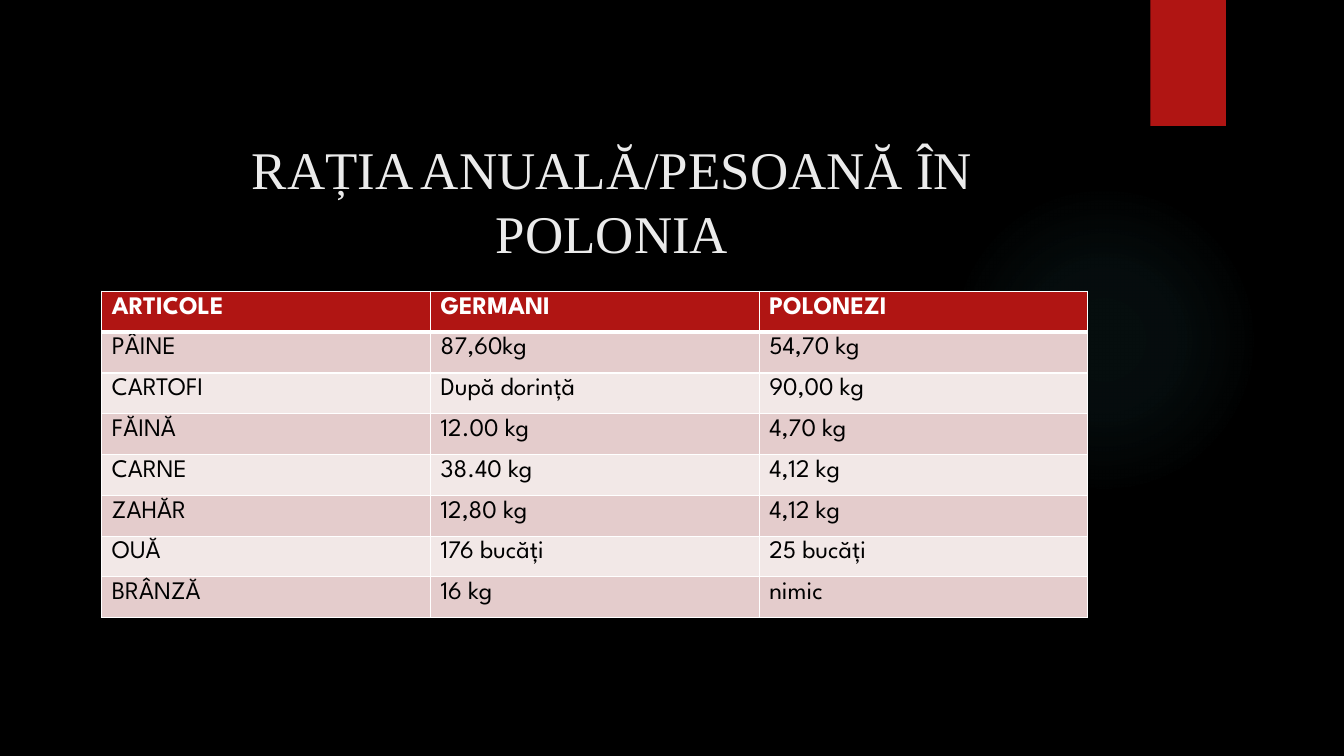
from dataclasses import dataclass

from lxml import etree
from pptx import Presentation, util as u
from pptx.dml.color import RGBColor
from pptx.enum import shapes, text
from pptx.oxml import ns


@dataclass(frozen=True)
class Theme:
    background: str = "000000"
    accent: str = "B01513"
    glow: str = "50B9C1"
    title_color: str = "EBEBEB"
    header_color: str = "FFFFFF"
    body_color: str = "000000"
    border: str = "FFFFFF"
    bands: tuple = ("E4CCCC", "F2E8E7")
    title_font: str = "Times New Roman"
    table_font: str = "League Spartan"
    title_size: float = 37.8
    table_size: float = 18
    thin: float = 1
    thick: float = 3


THEME = Theme()
TITLE = "RAȚIA ANUALĂ/PESOANĂ ÎN POLONIA"
RATIONS = [
    ("ARTICOLE", "GERMANI", "POLONEZI"),
    ("PÂINE", "87,60kg", "54,70 kg"),
    ("CARTOFI", "După dorință", "90,00 kg"),
    ("FĂINĂ", "12.00 kg", "4,70 kg"),
    ("CARNE", "38.40 kg", "4,12 kg"),
    ("ZAHĂR", "12,80 kg", "4,12 kg"),
    ("OUĂ", "176 bucăți", "25 bucăți"),
    ("BRÂNZĂ", "16 kg", "nimic"),
]


def paint(fill, color):
    fill.solid()
    fill.fore_color.rgb = RGBColor.from_string(color)


def add_run(paragraph, words, font, size, color, bold=False):
    run = paragraph.add_run()
    run.text = words
    run.font.name, run.font.size, run.font.bold = font, u.Pt(size), bold
    run.font.color.rgb = RGBColor.from_string(color)


def add_plain_shape(slide, preset, box):
    shape = slide.shapes.add_shape(preset, *map(u.Inches, box))
    shape.shadow.inherit = False
    shape.line.fill.background()
    return shape


def add_glow(slide, box):
    """Place a faint circle that fades out from its centre."""
    glow = add_plain_shape(slide, shapes.MSO_SHAPE.OVAL, box)
    stops = "".join(
        f'<a:gs pos="{place * 1000}"><a:srgbClr val="{THEME.glow}">'
        f'<a:alpha val="{opacity * 1000}"/></a:srgbClr></a:gs>'
        for place, opacity in ((0, 7), (36, 6), (69, 0)))
    gradient = etree.fromstring(
        f'<a:gradFill {ns.nsdecls("a")}><a:gsLst>{stops}</a:gsLst><a:path path="circle">'
        '<a:fillToRect l="50000" t="50000" r="50000" b="50000"/></a:path></a:gradFill>')
    glow._element.spPr.find(ns.qn("a:prstGeom")).addnext(gradient)


def add_ribbon(slide, box):
    ribbon = add_plain_shape(slide, shapes.MSO_SHAPE.RECTANGLE, box)
    paint(ribbon.fill, THEME.accent)


def add_title(slide, box):
    frame = slide.shapes.add_textbox(*map(u.Inches, box)).text_frame
    frame.word_wrap = True
    frame.vertical_anchor = text.MSO_ANCHOR.TOP
    heading = frame.paragraphs[0]
    heading.alignment = text.PP_ALIGN.CENTER
    add_run(heading, TITLE, THEME.title_font, THEME.title_size, THEME.title_color)


def add_borders(cell, top, bottom):
    widths = {"lnL": THEME.thin, "lnR": THEME.thin, "lnT": top, "lnB": bottom}
    for side, width in widths.items():
        line = etree.SubElement(cell._tc.get_or_add_tcPr(), ns.qn(f"a:{side}"), w=str(u.Pt(width)))
        fill = etree.SubElement(line, ns.qn("a:solidFill"))
        etree.SubElement(fill, ns.qn("a:srgbClr"), val=THEME.border)


def add_rations_table(slide, box):
    table = slide.shapes.add_table(len(RATIONS), len(RATIONS[0]), *map(u.Inches, box)).table
    for row, entries in enumerate(RATIONS):
        header = row == 0
        band = THEME.accent if header else THEME.bands[(row - 1) % 2]
        color = THEME.header_color if header else THEME.body_color
        top = THEME.thick if row == 1 else THEME.thin
        bottom = THEME.thick if header else THEME.thin
        for column, entry in enumerate(entries):
            cell = table.cell(row, column)
            add_borders(cell, top, bottom)
            paint(cell.fill, band)
            add_run(cell.text_frame.paragraphs[0], entry, THEME.table_font,
                    THEME.table_size, color, header)


def main():
    deck = Presentation()
    deck.slide_width, deck.slide_height = u.Inches(13.33), u.Inches(7.5)
    slide = deck.slides.add_slide(deck.slide_layouts[6])
    paint(slide.background.fill, THEME.background)
    add_glow(slide, (9.41, 1.83, 3.08, 3.08))
    add_ribbon(slide, (11.41, 0, 0.75, 1.25))
    add_title(slide, (1.53, 1.31, 9.08, 0.72))
    add_rations_table(slide, (1.01, 2.89, 9.78, 3.24))
    deck.save("out.pptx")


if __name__ == "__main__":
    main()
